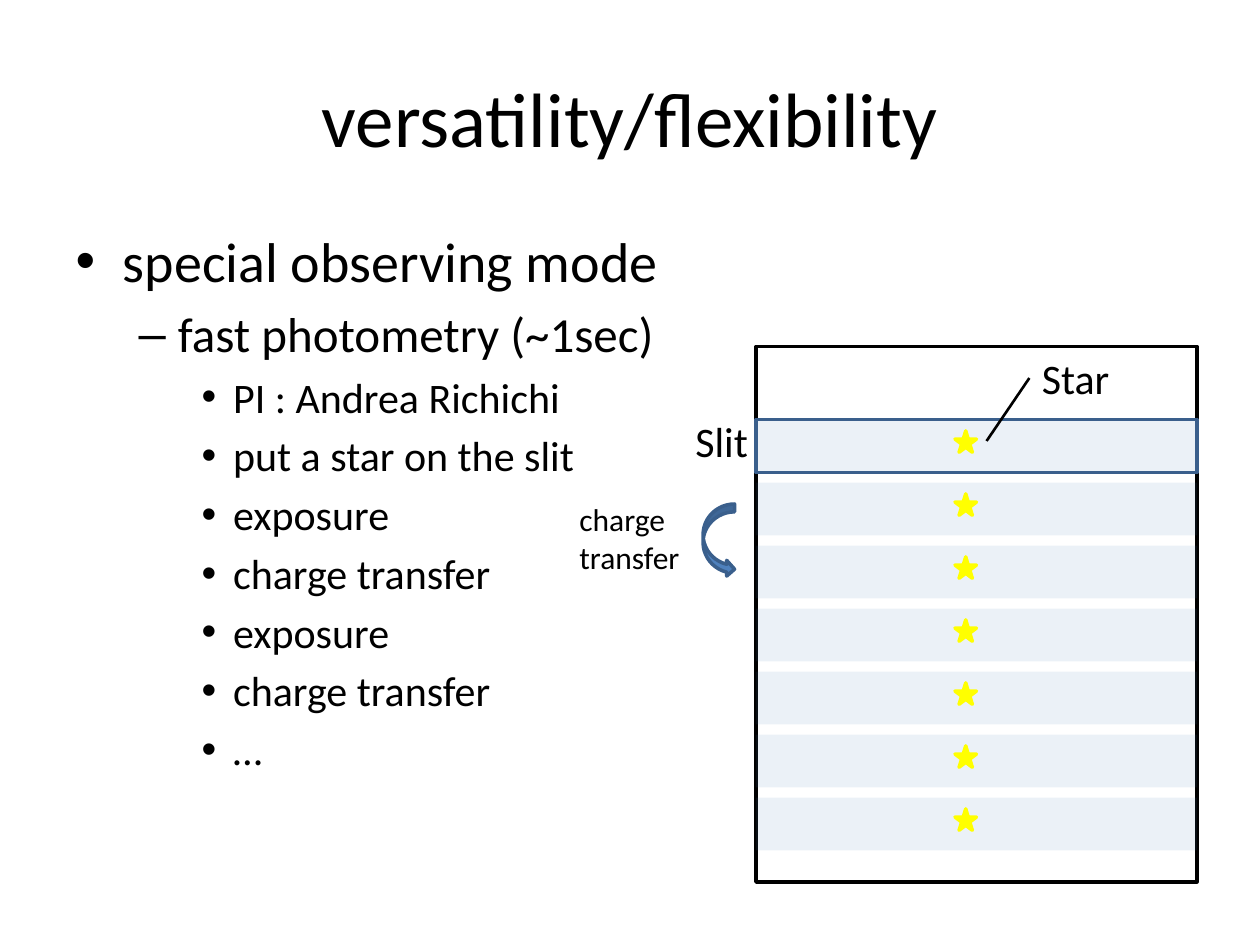
from dataclasses import dataclass

from lxml import etree
from pptx import Presentation
from pptx import util as u
from pptx.dml.color import RGBColor
from pptx.enum import shapes, text
from pptx.oxml import ns

IN = u.Inches
KIND = shapes.MSO_SHAPE


@dataclass(frozen=True)
class Theme:
    font: str = "Calibri"
    black: str = "000000"
    white: str = "FFFFFF"
    blue: str = "4F81BD"
    edge: str = "3A5F8C"
    star: str = "FFFF00"
    title: int = 44
    levels: tuple = (32, 28, 24)
    label: int = 24
    note: int = 18
    line: float = 2
    thin: float = 1.5
    alpha: int = 11


T = Theme()

POINTS = [
    (0, "special observing mode"),
    (1, "fast photometry (~1sec)"),
    (2, "PI : Andrea Richichi"),
    (2, "put a star on the slit"),
    (2, "exposure"),
    (2, "charge transfer"),
    (2, "exposure"),
    (2, "charge transfer"),
    (2, "…"),
]


def rgb(code):
    return RGBColor.from_string(code)


def write(para, words, size, color=T.black, align=None):
    run = para.add_run()
    run.text = words
    run.font.name = T.font
    run.font.size = u.Pt(size)
    run.font.color.rgb = rgb(color)
    para.alignment = align


def place(item, box):
    item.left, item.top, item.width, item.height = map(IN, box)


def draw(slide, kind, box, fill, line=None, alpha=None):
    """Add a preset shape; alpha is its fill opacity in percent."""
    item = slide.shapes.add_shape(kind, *map(IN, box))
    item.shadow.inherit = False
    item.fill.solid()
    item.fill.fore_color.rgb = rgb(fill)
    if alpha is not None:
        color = item.fill._xPr.find(".//" + ns.qn("a:srgbClr"))
        etree.SubElement(color, ns.qn("a:alpha"), val=str(alpha * 1000))
    if line:
        item.line.color.rgb = rgb(line)
        item.line.width = u.Pt(T.line)
    else:
        item.line.fill.background()


def label(slide, words, box, size):
    frame = slide.shapes.add_textbox(*map(IN, box)).text_frame
    frame.word_wrap = True
    write(frame.paragraphs[0], words, size)


def link(slide, start, end):
    line = slide.shapes.add_connector(
        shapes.MSO_CONNECTOR.STRAIGHT, *map(IN, start + end))
    line.line.color.rgb = rgb(T.black)
    line.line.width = u.Pt(T.thin)
    etree.SubElement(line._element.spPr, ns.qn("a:effectLst"))


def head(slide, box):
    title = slide.shapes.title
    place(title, box)
    title.text_frame.vertical_anchor = text.MSO_ANCHOR.MIDDLE
    write(title.text_frame.paragraphs[0], "versatility/flexibility",
          T.title, align=text.PP_ALIGN.CENTER)


def points(slide, box):
    body = slide.placeholders[1]
    place(body, box)
    frame = body.text_frame
    for i, (level, words) in enumerate(POINTS):
        para = frame.add_paragraph() if i else frame.paragraphs[0]
        para.level = level
        write(para, words, T.levels[level])


def chip(slide, box, count=7):
    """Draw the detector: the slit, its shifted bands and their stars."""
    left, top, wide, _ = box
    first, step, band, size = top + 0.58, 0.5, 0.42, 0.17
    draw(slide, KIND.RECTANGLE, box, T.white, T.black)
    for i in range(count):
        y = first + i * step
        draw(slide, KIND.RECTANGLE, (left, y, wide, band), T.blue,
             line=None if i else T.edge, alpha=T.alpha)
        draw(slide, KIND.STAR_5_POINT, (left + 1.58, y + 0.09, size, size),
             T.star, T.star)
    label(slide, "Slit", (left - 0.58, top + 0.5, 0.75, 0.5), T.label)
    label(slide, "Star", (left + 2.17, top, 0.75, 0.5), T.label)
    link(slide, (left + 1.83, top + 0.75), (left + 2.17, top + 0.25))


def shift(slide, box):
    """Draw the charge transfer note with its curved arrow."""
    left, top, wide, high = box
    label(slide, "charge transfer", (left, top, wide - 0.25, high), T.note)
    draw(slide, KIND.CURVED_RIGHT_ARROW,
         (left + wide - 0.25, top + 0.08, 0.25, 0.58), T.blue, T.edge)


def main():
    deck = Presentation()
    deck.slide_width, deck.slide_height = IN(10), IN(7.5)
    slide = deck.slides.add_slide(deck.slide_layouts[1])
    head(slide, (0.5, 0.3, 9, 1.25))
    points(slide, (0.5, 1.75, 9, 4.95))
    chip(slide, (6, 2.75, 3.5, 4.25))
    shift(slide, (4.5, 3.92, 1.33, 0.71))
    deck.save("out.pptx")


if __name__ == "__main__":
    main()
